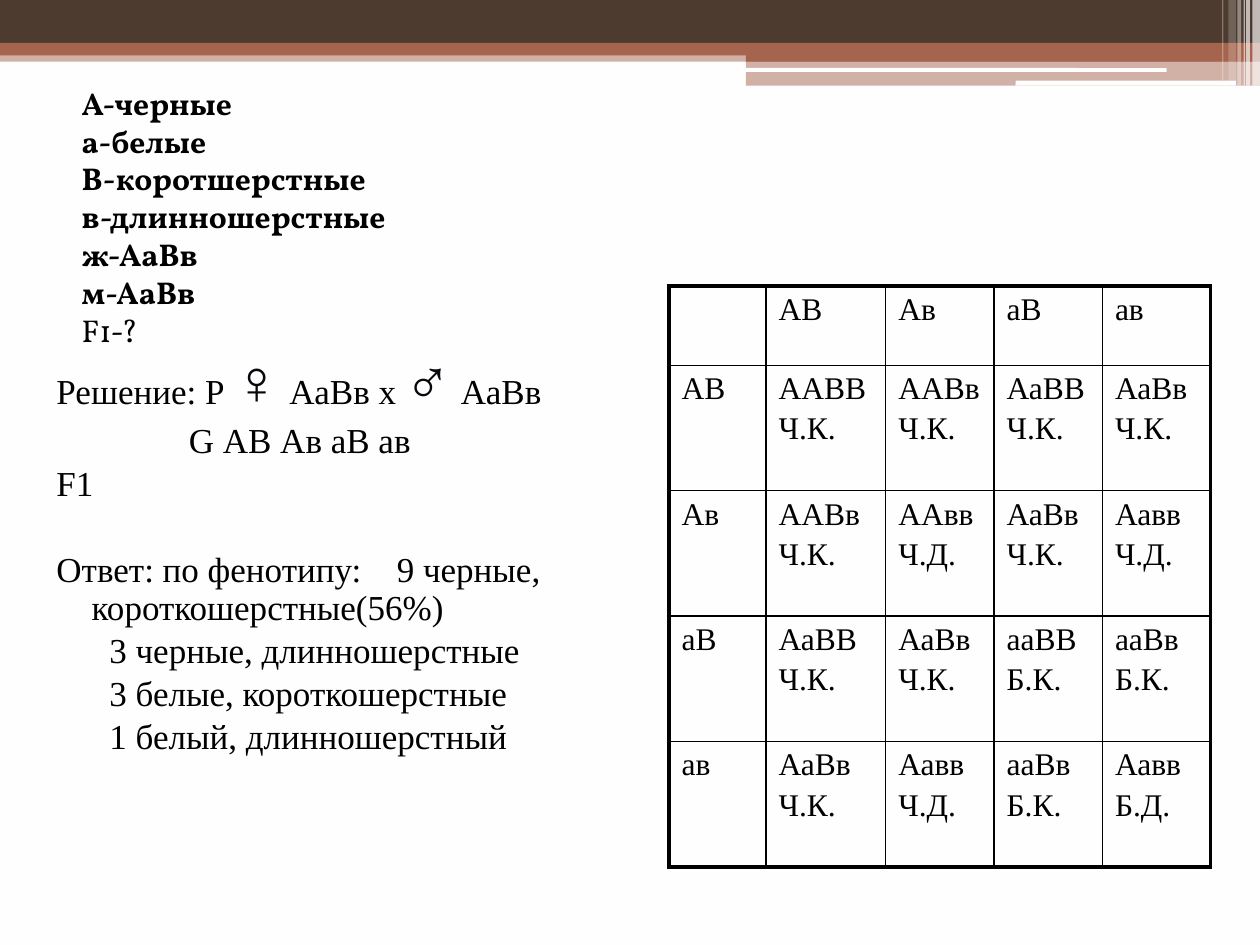
from lxml.etree import SubElement
from pptx import Presentation
from pptx.dml.color import RGBColor
from pptx.enum.shapes import MSO_SHAPE
from pptx.enum.text import MSO_ANCHOR
from pptx.oxml.ns import qn
from pptx.util import Inches, Pt

SLIDE_W, SLIDE_H = Inches(10), Inches(7.5)
BACKGROUND = RGBColor(0xFF, 0xFE, 0xFF)
WHITE = RGBColor(0xFF, 0xFF, 0xFF)
BLACK = RGBColor(0, 0, 0)
SYMBOL_INK = RGBColor(0x08, 0x08, 0x0C)
BROWN = RGBColor(0x4E, 0x3B, 0x30)
RUST = RGBColor(0xA5, 0x64, 0x4E)
SERIF, HEADING = "Times New Roman", "Vollkorn"
THICK, THIN = 2.25, 1

# left, top, width, height in percent of the slide; colour; opacity in percent
BANDS = [
    (0, 5.33, 100, 1.2, RUST, 50),
    (0, 0, 100, 4.53, BROWN, 100),
    (0, 4.53, 100, 1.33, RUST, 100),
    (59.2, 5.2, 40.8, 1.33, RUST, 100),
    (59.2, 6.4, 40.8, 2.67, RUST, 50),
]
WHITE_BARS = [(59.1, 7.2, 33.5, 0.4), (80.6, 8.53, 17.5, 0.53)]
# left, width, height in percent of the slide; opacity in percent
CORNER_STRIPES = [
    (99.4, 0.6, 9.07, 65), (98.9, 0.3, 9.07, 65), (98.7, 0.1, 9.07, 60),
    (98.2, 0.3, 9.07, 40), (97.5, 0.6, 8.53, 20), (97, 0.1, 8.53, 30),
]

TRAITS = ["А-черные", "а-белые", "В-коротшерстные", "в-длинношерстные",
          "ж-АаВв", "м-АаВв"]
PHENOTYPES = ["3 черные, длинношерстные", "3 белые, короткошерстные",
              "1 белый, длинношерстный"]
GAMETES = ["АВ", "Ав", "аВ", "ав"]
OFFSPRING = [
    ["ААВВ Ч.К.", "ААВв Ч.К.", "АаВВ Ч.К.", "АаВв Ч.К."],
    ["ААВв Ч.К.", "ААвв Ч.Д.", "АаВв Ч.К.", "Аавв Ч.Д."],
    ["АаВВ Ч.К.", "АаВв Ч.К.", "ааВВ Б.К.", "ааВв Б.К."],
    ["АаВв Ч.К.", "Аавв Ч.Д.", "ааВв Б.К.", "Аавв Б.Д."],
]


def share_x(percent):
    return round(SLIDE_W * percent / 100)


def share_y(percent):
    return round(SLIDE_H * percent / 100)


def area(left, top, width, height):
    """Turn percentages of the slide into a position and a size."""
    return share_x(left), share_y(top), share_x(width), share_y(height)


def add_block(slide, place, colour, opacity=100, kind=MSO_SHAPE.RECTANGLE):
    block = slide.shapes.add_shape(kind, *area(*place))
    block.shadow.inherit = False
    block.line.fill.background()
    block.fill.solid()
    block.fill.fore_color.rgb = colour
    if opacity < 100:
        tint = block.fill._xPr.find(".//" + qn("a:srgbClr"))
        SubElement(tint, qn("a:alpha"), val=str(opacity * 1000))


def write(paragraph, text, size=20, font=SERIF, colour=BLACK, bold=False, tracking=0):
    """Append a run; tracking is the extra width after each letter, in points."""
    run = paragraph.add_run()
    run.text = text
    run.font.size = Pt(size)
    run.font.name = font
    run.font.color.rgb = colour
    run.font.bold = bold
    if tracking:
        run.font._element.set("spc", str(tracking * 100))


def next_paragraph(frame):
    first = frame.paragraphs[0]
    return frame.add_paragraph() if first.runs else first


def add_text_area(slide, place, anchor=MSO_ANCHOR.TOP):
    frame = slide.shapes.add_textbox(*area(*place)).text_frame
    frame.word_wrap = True
    frame.vertical_anchor = anchor
    return frame


def solution_line(frame, margin=0.4, indent=-0.28, before=3):
    line = next_paragraph(frame)
    line.line_spacing = 0.9
    line.space_before = Pt(before)
    properties = line._p.get_or_add_pPr()
    properties.set("marL", str(Inches(margin)))
    properties.set("indent", str(Inches(indent)))
    return line


def add_decoration(slide):
    for *place, colour, opacity in BANDS:
        add_block(slide, place, colour, opacity)
    for place in WHITE_BARS:
        add_block(slide, place, BACKGROUND, kind=MSO_SHAPE.ROUNDED_RECTANGLE)
    for left, width, height, opacity in CORNER_STRIPES:
        add_block(slide, (left, 0, width, height), WHITE, opacity)


def add_traits(slide):
    frame = add_text_area(slide, (5.5, 9.33, 62, 27.07), MSO_ANCHOR.MIDDLE)
    for trait in TRAITS:
        write(next_paragraph(frame), trait, size=18, font=HEADING, bold=True)
    write(next_paragraph(frame), "F1-?", size=18, font=HEADING)


def add_solution(slide):
    frame = add_text_area(slide, (2.3, 36.4, 56.3, 60))
    cross = solution_line(frame)
    write(cross, "Решение: Р ")
    write(cross, "♀", size=36, colour=SYMBOL_INK)
    write(cross, " АаВв х ")
    write(cross, "♂", size=36, colour=SYMBOL_INK)
    write(cross, " АаВв")
    write(solution_line(frame, margin=1.17, indent=0), "G АВ Ав аВ ав")
    write(solution_line(frame), "F1")
    answer = solution_line(frame, before=27.5)
    write(answer, "Ответ: по фенотипу:")
    write(answer, " ", tracking=15)
    write(answer, "9 черные, короткошерстные(56%)")
    for phenotype in PHENOTYPES:
        write(solution_line(frame, margin=0.54, indent=0), phenotype)


def set_borders(cell, **widths):
    properties = cell._tc.get_or_add_tcPr()
    for position, (side, width) in enumerate(widths.items()):
        edge = properties.makeelement(qn(f"a:ln{side}"), {"w": str(Pt(width))})
        fill = SubElement(edge, qn("a:solidFill"))
        SubElement(fill, qn("a:srgbClr"), val=str(BLACK))
        properties.insert(position, edge)


def add_punnett_square(slide):
    rows = [[""] + GAMETES]
    rows += [[gamete] + children for gamete, children in zip(GAMETES, OFFSPRING)]
    last = len(GAMETES)
    table = slide.shapes.add_table(
        last + 1, last + 1, *area(53.1, 30.27, 43, 61.47)).table
    table.first_row = table.horz_banding = False
    for column, width in zip(table.columns, [7.7, 9.5] + [8.6] * 3):
        column.width = share_x(width)
    for row, height in zip(table.rows, [8.4] + [13.27] * last):
        row.height = share_y(height)
    for r, row in enumerate(rows):
        for c, content in enumerate(row):
            cell = table.cell(r, c)
            cell.fill.background()
            set_borders(cell,
                        L=THIN if c else THICK, R=THICK if c == last else THIN,
                        T=THIN if r else THICK, B=THICK if r == last else THIN)
            for part in content.split():
                line = next_paragraph(cell.text_frame)
                line.space_before = Pt(3)
                write(line, part, size=18)


def main():
    presentation = Presentation()
    presentation.slide_width, presentation.slide_height = SLIDE_W, SLIDE_H
    slide = presentation.slides.add_slide(presentation.slide_layouts[6])
    slide.background.fill.solid()
    slide.background.fill.fore_color.rgb = BACKGROUND
    add_decoration(slide)
    add_traits(slide)
    add_solution(slide)
    add_punnett_square(slide)
    presentation.save("out.pptx")


if __name__ == "__main__":
    main()
